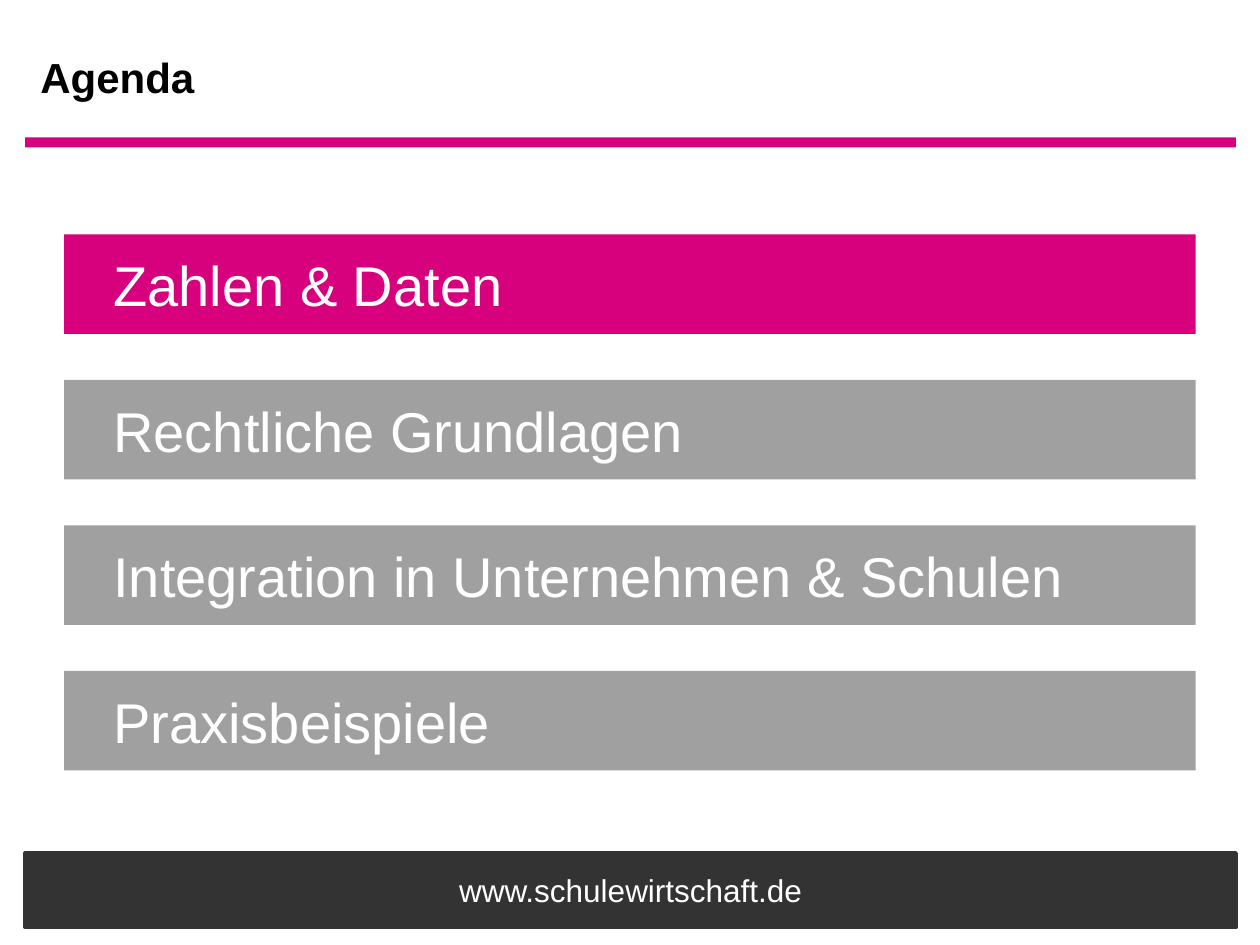
from pptx import Presentation
from pptx.dml.color import RGBColor
from pptx.enum import shapes, text
from pptx.util import Inches, Pt

# Content
TITLE = "Agenda"
FOOTER = "www.schulewirtschaft.de"
AGENDA = ["Zahlen & Daten", "Rechtliche Grundlagen",
          "Integration in Unternehmen & Schulen", "Praxisbeispiele"]
CURRENT = 0

# Style and grid
FONT = "Arial"
PINK, GRAY, DARK, WHITE, BLACK = "D7007D", "A0A0A0", "333333", "FFFFFF", "000000"
BAND_LEFT, BAND_WIDTH = 0.2, 9.61
ITEM_LEFT, ITEM_TOP, ITEM_WIDTH, ITEM_HEIGHT = 0.51, 1.86, 8.98, 0.79
ITEM_STEP = 1.155


def color(value):
    return RGBColor.from_string(value)


def add_bar(slide, left, top, width, height, fill):
    shape = slide.shapes.add_shape(
        shapes.MSO_SHAPE.RECTANGLE, *map(Inches, (left, top, width, height)))
    shape.shadow.inherit = False
    shape.fill.solid()
    shape.fill.fore_color.rgb = color(fill)
    shape.line.fill.background()
    return shape


def write(shape, words, size, font_color, align=text.PP_ALIGN.LEFT,
          bold=False, margins=(0.1, 0.05, 0.1, 0.05)):
    frame = shape.text_frame
    frame.word_wrap = True
    frame.auto_size = text.MSO_AUTO_SIZE.NONE
    frame.vertical_anchor = text.MSO_ANCHOR.MIDDLE
    (frame.margin_left, frame.margin_top,
     frame.margin_right, frame.margin_bottom) = map(Inches, margins)
    paragraph = frame.paragraphs[0]
    paragraph.alignment = align
    run = paragraph.add_run()
    run.text = words
    run.font.name = FONT
    run.font.size = Pt(size)
    run.font.bold = bold
    run.font.color.rgb = color(font_color)


def main():
    presentation = Presentation()
    presentation.slide_width = Inches(10)
    presentation.slide_height = Inches(7.5)
    slide = presentation.slides.add_slide(presentation.slide_layouts[5])

    # Footer band
    footer = add_bar(slide, BAND_LEFT, 6.77, BAND_WIDTH, 0.59, DARK)
    footer.line.color.rgb = color(DARK)
    footer.line.width = Pt(2)
    write(footer, FOOTER, 18, WHITE, text.PP_ALIGN.CENTER)

    # Title and rule below it
    add_bar(slide, BAND_LEFT, 1.09, BAND_WIDTH, 0.08, PINK)
    title = slide.shapes.title
    title.left, title.top = Inches(0.22), Inches(0.26)
    title.width, title.height = Inches(5.91), Inches(0.69)
    write(title, TITLE, 24, BLACK, bold=True)

    # Agenda items, the current one highlighted
    for index, item in enumerate(AGENDA):
        bar = add_bar(slide, ITEM_LEFT, ITEM_TOP + index * ITEM_STEP,
                      ITEM_WIDTH, ITEM_HEIGHT, PINK if index == CURRENT else GRAY)
        write(bar, item, 32, WHITE, margins=(0.39, 0.05, 0.1, 0.05))

    presentation.save("out.pptx")


if __name__ == "__main__":
    main()
